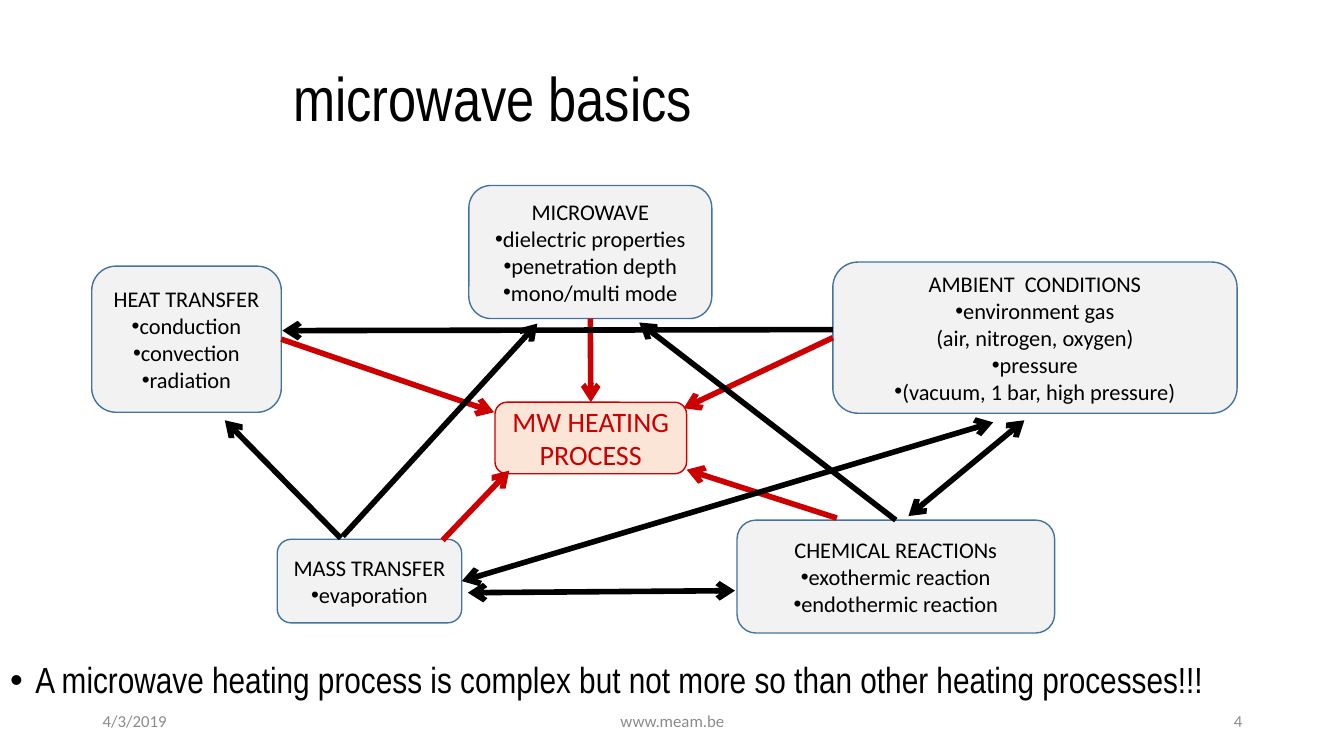
import pptx
import pptx.util
import pptx.dml.color
import pptx.enum.shapes
import pptx.enum.text
import pptx.oxml.ns
from lxml import etree

Inches, Pt = pptx.util.Inches, pptx.util.Pt
RGBColor = pptx.dml.color.RGBColor
Align, Anchor = pptx.enum.text.PP_ALIGN, pptx.enum.text.MSO_ANCHOR

BLACK = RGBColor(0x00, 0x00, 0x00)
RED = RGBColor(0xCC, 0x00, 0x00)
PEACH = RGBColor(0xFB, 0xE5, 0xD6)
PALE_GREY = RGBColor(0xF2, 0xF2, 0xF2)
FOOTER_GREY = RGBColor(0x8C, 0x8C, 0x8C)
BLUE = RGBColor(0x43, 0x73, 0x9E)
TOP, LEFT, BOTTOM, RIGHT = range(4)

TITLE = "microwave basics"
CONCLUSION = ("A microwave heating process is complex but not more so "
              "than other heating processes!!!")
FOOTERS = [
    ("4/3/2019", 0.92, 3, Align.LEFT),
    ("www.meam.be", 4.42, 4.5, Align.CENTER),
    ("4", 9.42, 3, Align.RIGHT),
]
PROCESS = ("MW HEATING PROCESS", (4.91, 3.99, 1.9, 0.71))
FACTORS = {
    "heat": ((0.91, 2.64, 1.88, 1.45),
             ["HEAT TRANSFER", "• conduction", "• convection", "• radiation"]),
    "ambient": ((8.26, 2.6, 4.01, 1.5),
                ["AMBIENT  CONDITIONS", "• environment gas", "(air, nitrogen, oxygen)",
                 "• pressure", "• (vacuum, 1 bar, high pressure)"]),
    "chemical": ((7.31, 5.16, 3.15, 1.12),
                 ["CHEMICAL REACTIONs", "• exothermic reaction", "• endothermic reaction"]),
    "microwave": ((4.65, 1.84, 2.41, 1.32),
                  ["MICROWAVE", "• dielectric properties", "• penetration depth",
                   "• mono/multi mode"]),
    "mass": ((2.75, 5.35, 1.83, 0.83), ["MASS TRANSFER", "• evaporation"]),
}
# Each end is either a point or a (box name, side) pair.
ARROWS = [
    (("microwave", BOTTOM), ("process", TOP), RED, False),
    ((4.39, 5.36), (5.05, 4.67), RED, False),
    ((8.3, 5.14), (6.81, 4.66), RED, False),
    (("ambient", LEFT), (6.78, 4.05), RED, False),
    (("heat", RIGHT), (4.9, 4.09), RED, False),
    ((3.38, 5.34), (2.23, 4.17), BLACK, False),
    ((3.4, 5.32), (5.33, 3.21), BLACK, False),
    ((8.26, 3.27), (2.8, 3.28), BLACK, False),
    (("chemical", TOP), (6.34, 3.2), BLACK, False),
    ((9.01, 5.12), (10.16, 4.17), BLACK, True),
    (("mass", RIGHT), (9.85, 4.19), BLACK, True),
    ((7.29, 5.86), (4.64, 5.88), BLACK, True),
]


def add_xml(parent, tag, **attributes):
    """Append a DrawingML element to the parent."""
    return etree.SubElement(parent, pptx.oxml.ns.qn(tag), attributes)


def add_bullet(para, indent):
    """Give the paragraph a round bullet with a hanging indent."""
    properties = para._p.get_or_add_pPr()
    properties.set("marL", str(Inches(indent)))
    properties.set("indent", str(-Inches(indent)))
    add_xml(properties, "a:buFont", typeface="Arial")
    add_xml(properties, "a:buChar", char="•")


def style_text(para, size, color, align, font="Calibri"):
    """Align the paragraph and format its runs."""
    para.alignment = align
    for span in para.runs:
        span.font.name = font
        span.font.size = Pt(size)
        span.font.color.rgb = color


def fill_placeholder(holder, text, place, size, anchor):
    """Place a template placeholder and set its single paragraph."""
    holder.left, holder.top, holder.width, holder.height = map(Inches, place)
    frame = holder.text_frame
    frame.text = text
    frame.auto_size = pptx.enum.text.MSO_AUTO_SIZE.NONE
    frame.vertical_anchor = anchor
    para = frame.paragraphs[0]
    para.line_spacing = 0.9
    para.space_before = Pt(0)
    style_text(para, size, BLACK, Align.LEFT, "Arial Narrow")
    return para


def add_box(page, place, lines, fill, edge, size, color):
    """Add a rounded box; lines that open with a dot become bullets."""
    box = page.shapes.add_shape(
        pptx.enum.shapes.MSO_SHAPE.ROUNDED_RECTANGLE, *map(Inches, place))
    box.shadow.inherit = False
    box.fill.solid()
    box.fill.fore_color.rgb = fill
    box.line.color.rgb = edge
    box.line.width = Pt(1)
    frame = box.text_frame
    frame.word_wrap = True
    frame.vertical_anchor = Anchor.MIDDLE
    for number, line in enumerate(lines):
        para = frame.add_paragraph() if number else frame.paragraphs[0]
        para.text = line.removeprefix("• ")
        if line.startswith("• "):
            add_bullet(para, 0)
        style_text(para, size, color, Align.CENTER)
    return box


def add_arrow(page, boxes, start, end, color, both_ways):
    """Draw an arrow between points or box sides."""
    points = [(0, 0) if stop[0] in boxes else stop for stop in (start, end)]
    arrow = page.shapes.add_connector(
        pptx.enum.shapes.MSO_CONNECTOR.STRAIGHT,
        *(Inches(value) for point in points for value in point))
    for stop, connect in ((start, arrow.begin_connect), (end, arrow.end_connect)):
        if stop[0] in boxes:
            connect(boxes[stop[0]], stop[1])
    arrow.line.color.rgb = color
    arrow.line.width = Pt(4)
    line = arrow.line._get_or_add_ln()
    if both_ways:
        add_xml(line, "a:headEnd", type="arrow")
    add_xml(line, "a:tailEnd", type="arrow")
    add_xml(arrow._element.spPr, "a:effectLst")


def add_footer(page, text, left, width, align):
    """Add one footer entry."""
    box = page.shapes.add_textbox(*map(Inches, (left, 6.95, width, 0.4)))
    frame = box.text_frame
    frame.word_wrap = True
    frame.vertical_anchor = Anchor.MIDDLE
    frame.text = text
    style_text(frame.paragraphs[0], 12, FOOTER_GREY, align)


def main():
    """Build the slide and save the deck."""
    deck = pptx.Presentation()
    deck.slide_width, deck.slide_height = Inches(13.33), Inches(7.5)
    page = deck.slides.add_slide(deck.slide_layouts[1])
    fill_placeholder(page.shapes.title, TITLE, (2.81, 0.28, 9.42, 1.45), 44, Anchor.MIDDLE)
    conclusion = fill_placeholder(page.placeholders[1], CONCLUSION,
                                  (0, 6.52, 12.67, 0.67), 25.9, Anchor.TOP)
    add_bullet(conclusion, 0.25)
    for footer in FOOTERS:
        add_footer(page, *footer)
    label, place = PROCESS
    boxes = {"process": add_box(page, place, [label], PEACH, RED, 20, RED)}
    for name, (place, lines) in FACTORS.items():
        boxes[name] = add_box(page, place, lines, PALE_GREY, BLUE, 16, BLACK)
    for arrow in ARROWS:
        add_arrow(page, boxes, *arrow)
    deck.save("out.pptx")


if __name__ == "__main__":
    main()
